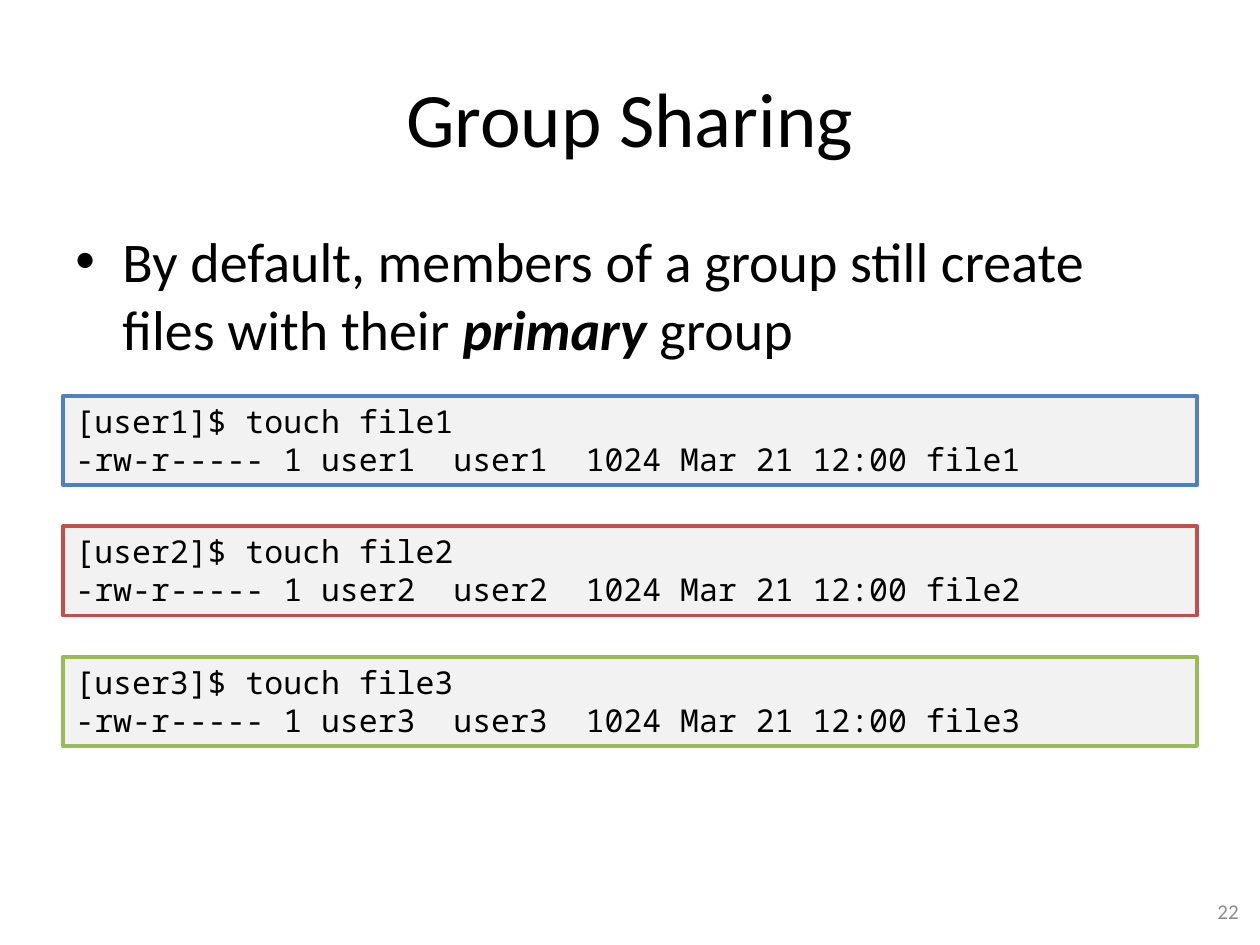
from lxml.etree import SubElement
from pptx import Presentation
from pptx.dml.color import RGBColor
from pptx.enum.shapes import MSO_SHAPE
from pptx.enum.text import MSO_ANCHOR, MSO_AUTO_SIZE, PP_ALIGN
from pptx.oxml.ns import qn
from pptx.util import Cm, Pt

COLORS = {
    "text": "000000",
    "number": "8C8C8C",
    "terminal": "F2F2F2",
    "user1": "4F81BD",
    "user2": "C0504D",
    "user3": "9BBB59",
}
LEFT, WIDTH = Cm(1.27), Cm(22.86)


def color(name):
    """Return the named colour."""
    return RGBColor.from_string(COLORS[name])


def format_runs(paragraph, size, font_name="Calibri", color_name="text"):
    """Give every run of a paragraph the same font, size and colour."""
    for run in paragraph.runs:
        run.font.name = font_name
        run.font.size = Pt(size)
        run.font.color.rgb = color(color_name)


def place_title(slide, text, left, top, width, height):
    """Fill and place the title placeholder."""
    title = slide.shapes.title
    title.left, title.top, title.width, title.height = left, top, width, height
    text_frame = title.text_frame
    text_frame.text = text
    text_frame.vertical_anchor = MSO_ANCHOR.MIDDLE
    paragraph = text_frame.paragraphs[0]
    paragraph.alignment = PP_ALIGN.CENTER
    format_runs(paragraph, 44)


def add_bullet(slide, parts, left, top, width, height):
    """Add one bulleted paragraph from pairs of text and emphasis."""
    text_frame = slide.shapes.add_textbox(left, top, width, height).text_frame
    text_frame.word_wrap = True
    paragraph = text_frame.paragraphs[0]
    properties = paragraph._p.get_or_add_pPr()
    indent = Cm(0.95)
    properties.set("marL", str(indent))
    properties.set("indent", str(-indent))
    SubElement(properties, qn("a:buFont"), typeface="Arial")
    SubElement(properties, qn("a:buChar"), char="•")
    for text, emphasized in parts:
        run = paragraph.add_run()
        run.text = text
        run.font.bold = run.font.italic = emphasized
    format_runs(paragraph, 32)


def add_terminal(slide, user, file_name, left, top, width, height):
    """Add a terminal box in which a user creates a file."""
    shape = slide.shapes.add_shape(MSO_SHAPE.RECTANGLE, left, top, width, height)
    shape.shadow.inherit = False
    shape.fill.solid()
    shape.fill.fore_color.rgb = color("terminal")
    shape.line.color.rgb = color(user)
    shape.line.width = Pt(2.25)
    text_frame = shape.text_frame
    text_frame.word_wrap = True
    text_frame.auto_size = MSO_AUTO_SIZE.SHAPE_TO_FIT_TEXT
    text_frame.vertical_anchor = MSO_ANCHOR.TOP
    text_frame.text = (
        f"[{user}]$ touch {file_name}\n"
        f"-rw-r----- 1 {user}  {user}  1024 Mar 21 12:00 {file_name}"
    )
    for paragraph in text_frame.paragraphs:
        paragraph.alignment = PP_ALIGN.LEFT
        format_runs(paragraph, 18, "Noto Sans Mono")


def add_terminals(slide, left, top, width, height, pitch):
    """Stack one terminal box for each user."""
    for index in range(3):
        number = index + 1
        add_terminal(slide, f"user{number}", f"file{number}",
                     left, top + index * pitch, width, height)


def add_slide_number(slide, text, left, top, width, height):
    """Add the slide number at the right of its box."""
    text_frame = slide.shapes.add_textbox(left, top, width, height).text_frame
    text_frame.word_wrap = True
    text_frame.vertical_anchor = MSO_ANCHOR.MIDDLE
    text_frame.text = text
    paragraph = text_frame.paragraphs[0]
    paragraph.alignment = PP_ALIGN.RIGHT
    format_runs(paragraph, 12, color_name="number")


def main():
    """Build and save the slide."""
    presentation = Presentation()
    presentation.slide_width, presentation.slide_height = Cm(25.4), Cm(19.05)
    slide = presentation.slides.add_slide(presentation.slide_layouts[5])
    place_title(slide, "Group Sharing", LEFT, Cm(0.76), WIDTH, Cm(3.18))
    parts = [
        ("By default, members of a group still create files with their ", False),
        ("primary", True),
        (" group", False),
    ]
    add_bullet(slide, parts, LEFT, Cm(4.45), WIDTH, Cm(12.57))
    add_slide_number(slide, "22", Cm(19.3), Cm(17.86), Cm(5.92), Cm(1.02))
    add_terminals(slide, LEFT, Cm(7.98), WIDTH, Cm(1.8), Cm(2.63))
    presentation.save("out.pptx")


if __name__ == "__main__":
    main()
